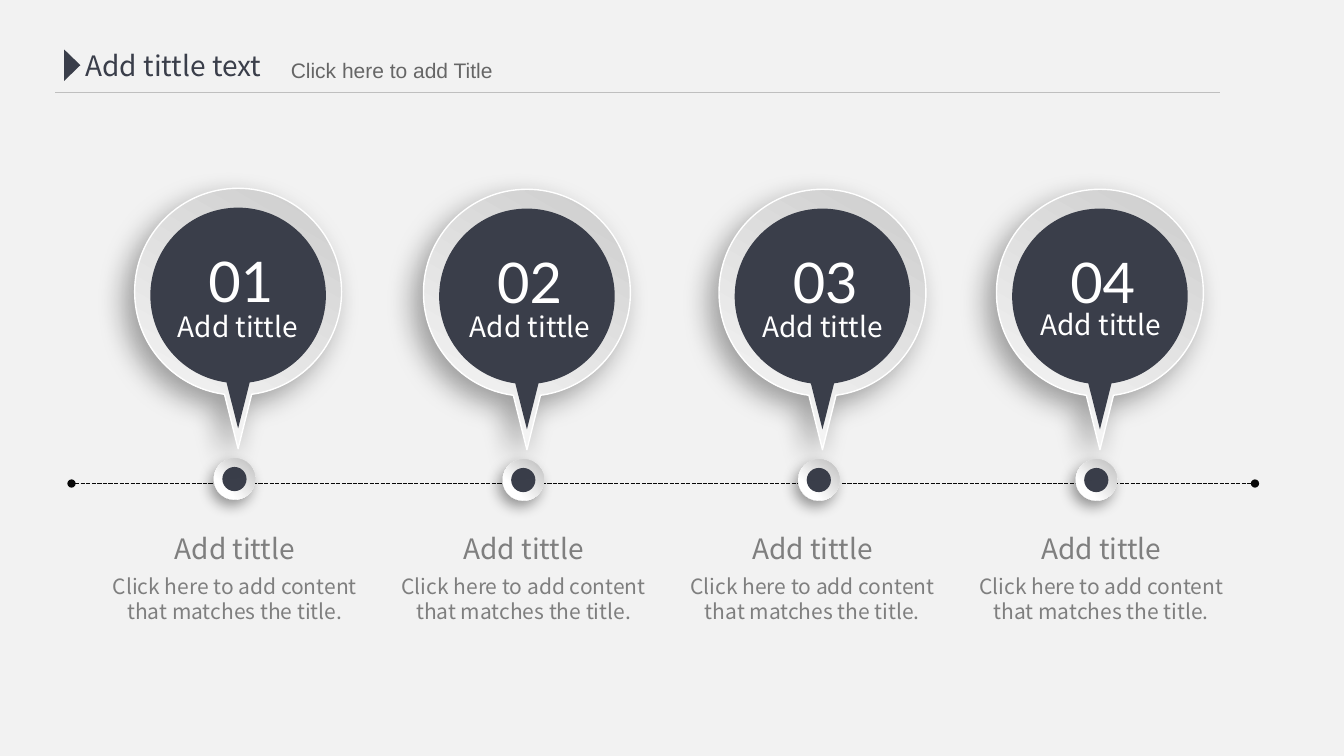
import math

from lxml import etree
from pptx import Presentation
from pptx import util as u
from pptx.dml import color as dml_color
from pptx.enum import dml, shapes, text
from pptx.oxml import ns

Pt = u.Pt
rgb = dml_color.RGBColor.from_string
DARK, GREY, WHITE = "3A3E4A", "7F7F7F", "FFFFFF"
SANS = "Noto Sans CJK SC"

presentation = Presentation()
presentation.slide_width, presentation.slide_height = Pt(960), Pt(540)
slide = presentation.slides.add_slide(presentation.slide_layouts[6])
slide.background.fill.solid()
slide.background.fill.fore_color.rgb = rgb("F2F2F2")


def add_text(group, content, left, top, width, height, sizes, font=SANS, color=DARK,
             align=text.PP_ALIGN.LEFT, inset=(5, 3), before=0, wrap=True):
    """Add a text box with one paragraph per line, each with its own size."""
    box = group.shapes.add_textbox(Pt(left), Pt(top), Pt(width), Pt(height))
    frame = box.text_frame
    frame.word_wrap = wrap
    frame.auto_size = text.MSO_AUTO_SIZE.SHAPE_TO_FIT_TEXT
    frame.margin_left = frame.margin_right = Pt(inset[0])
    frame.margin_top = frame.margin_bottom = Pt(inset[1])
    frame.text = content
    for paragraph, size in zip(frame.paragraphs, sizes):
        paragraph.alignment = align
        if before:
            paragraph.space_before = Pt(before)
        run_font = paragraph.runs[0].font
        run_font.size = Pt(size)
        run_font.name = font
        run_font.color.rgb = rgb(color)


def paint(shape, fill=None, gradient=None, angle=0, line=None, shadow=None):
    """Set a solid or gradient fill, an outline and an outer shadow."""
    if gradient:
        shape.fill.gradient()
        shape.fill.gradient_angle = 360 - angle
        for stop, (position, color) in zip(shape.fill.gradient_stops, gradient):
            stop.position = position
            stop.color.rgb = rgb(color)
    else:
        shape.fill.solid()
        shape.fill.fore_color.rgb = rgb(fill)
    if line:
        shape.line.color.rgb = rgb(line)
        shape.line.width = Pt(1)
    else:
        shape.line.fill.background()
    shape.shadow.inherit = False
    if shadow:
        alpha, blur, distance, direction = shadow
        effects = shape.element.spPr.find(ns.qn("a:effectLst"))
        outer = etree.SubElement(
            effects, ns.qn("a:outerShdw"), blurRad=str(Pt(blur)), dist=str(Pt(distance)),
            dir=str(direction * 60000), algn="ctr", rotWithShape="0")
        black = etree.SubElement(outer, ns.qn("a:srgbClr"), val="000000")
        etree.SubElement(black, ns.qn("a:alpha"), val=str(alpha * 1000))


# Header rule and timeline
for left, right, y, color, width, is_timeline in [
        (39.6, 871.2, 66.2, "BFBFBF", 0.75, False),
        (51.1, 896.4, 345.4, "080808", 1, True)]:
    connector = slide.shapes.add_connector(shapes.MSO_CONNECTOR.STRAIGHT,
                                           Pt(left), Pt(y), Pt(right), Pt(y))
    connector.line.color.rgb = rgb(color)
    connector.line.width = Pt(width)
    etree.SubElement(connector.element.spPr, ns.qn("a:effectLst"))
    if is_timeline:
        connector.line.dash_style = dml.MSO_LINE.SQUARE_DOT
        line_element = connector.element.spPr.find(ns.qn("a:ln"))
        for end in ("a:headEnd", "a:tailEnd"):
            etree.SubElement(line_element, ns.qn(end), type="oval")

# Header
header = slide.shapes.add_group_shape()
add_text(header, "Add tittle text", 54, 31.2, 154, 31.7, [20], inset=(7.2, 3.6), wrap=False)
marker = header.shapes.add_shape(shapes.MSO_SHAPE.ISOSCELES_TRIANGLE,
                                 Pt(40.5), Pt(40.8), Pt(22.3), Pt(11.5))
marker.rotation = 90
paint(marker, fill=DARK)
add_text(header, "Click here to add Title", 200.6, 37.7, 195, 25.2, [15], font="Arial",
         color="666666", inset=(7.2, 3.6), wrap=False)

# Descriptions under the timeline
descriptions = slide.shapes.add_group_shape()
for index in range(4):
    add_text(descriptions, "Add tittle\nClick here to add content that matches the title.",
             65.5 + 206.3 * index, 376.6, 204.5, 73.4, [20, 15], color=GREY,
             align=text.PP_ALIGN.CENTER, before=6)

# Marker rings and pin bodies: x and y offset of the centre, radius,
# half width and y offset of the tip (0 for a full circle), rotation, format
marker_layers = [
    (-2.6, 207.7, 14.8, 0, 0, 62.3,
     dict(gradient=[(0.17, WHITE), (0.88, "B8B8B8")], angle=45, shadow=(39, 10, 5, 123))),
    (-2.6, 207.7, 14.8, 0, 0, 273,
     dict(gradient=[(0.29, WHITE), (0.98, "BFBFBF")], angle=45)),
]
pin_layers = [
    (0, 73.9, 73.9, 9.7, 186, 0,
     dict(gradient=[(0, "CCCCCC"), (1, "FCFCFC")], angle=120, line=WHITE,
          shadow=(34, 20, 10, 136))),
    (0, 76.5, 62.7, 8.3, 171.5, 0, dict(fill=DARK)),
]

# Pins: centre, top, left and top of the label
for number, (center, pin_top, label_left, label_top) in enumerate([
        (170.1, 134.5, 119.1, 218.3),
        (376.4, 135.2, 327.8, 217.8),
        (587.5, 135.2, 536.8, 217.8),
        (785.7, 135.2, 735.5, 216.8)], start=1):
    marker_group = slide.shapes.add_group_shape()
    pin_group = slide.shapes.add_group_shape()
    for group, layers in [(marker_group, marker_layers), (pin_group, pin_layers)]:
        for dx, dy, radius, half_width, tip, rotation, look in layers:
            x, y = center + dx, pin_top + dy
            gap = math.asin(half_width / radius)
            arcs = [(0, math.pi / 2), (math.pi / 2, math.pi - gap),
                    (math.pi + gap, math.pi * 1.5), (math.pi * 1.5, math.pi * 2)]
            points, sizes = [], []
            for start, end in arcs:
                if tip and start > math.pi and len(sizes) == 2:
                    points += [(center, pin_top + tip),
                               (x + radius * math.sin(start), y - radius * math.cos(start))]
                    sizes += [1, 1]
                handle = radius * 4 / 3 * math.tan((end - start) / 4)
                for a, reach in [(start, handle), (end, -handle), (end, 0)]:
                    points.append((x + radius * math.sin(a) + reach * math.cos(a),
                                   y - radius * math.cos(a) + reach * math.sin(a)))
                sizes.append(3)
            builder = group.shapes.build_freeform(Pt(x), Pt(y - radius))
            builder.add_line_segments([(Pt(px), Pt(py)) for px, py in points])
            body = builder.convert_to_shape()

            # Each run of three points becomes one curve
            segments = iter(list(body.element.iter(ns.qn("a:lnTo"))))
            for size in sizes:
                first, *others = [next(segments) for _ in range(size)]
                if others:
                    first.tag = ns.qn("a:cubicBezTo")
                for other in others:
                    first.append(other[0])
                    other.getparent().remove(other)
            body.rotation = rotation
            paint(body, **look)

    dot = marker_group.shapes.add_shape(shapes.MSO_SHAPE.OVAL, Pt(center - 11.25),
                                        Pt(pin_top + 199.05), Pt(17.3), Pt(17.3))
    paint(dot, fill=DARK)
    add_text(pin_group, "Add tittle", label_left, label_top, 101.5, 29.5, [20],
             color=WHITE, align=text.PP_ALIGN.CENTER)
    add_text(pin_group, f"{number:02}", center - 26.2, pin_top + 38.9, 101.5, 55.4, [40],
             font="Lato", color=WHITE)

presentation.save("out.pptx")
